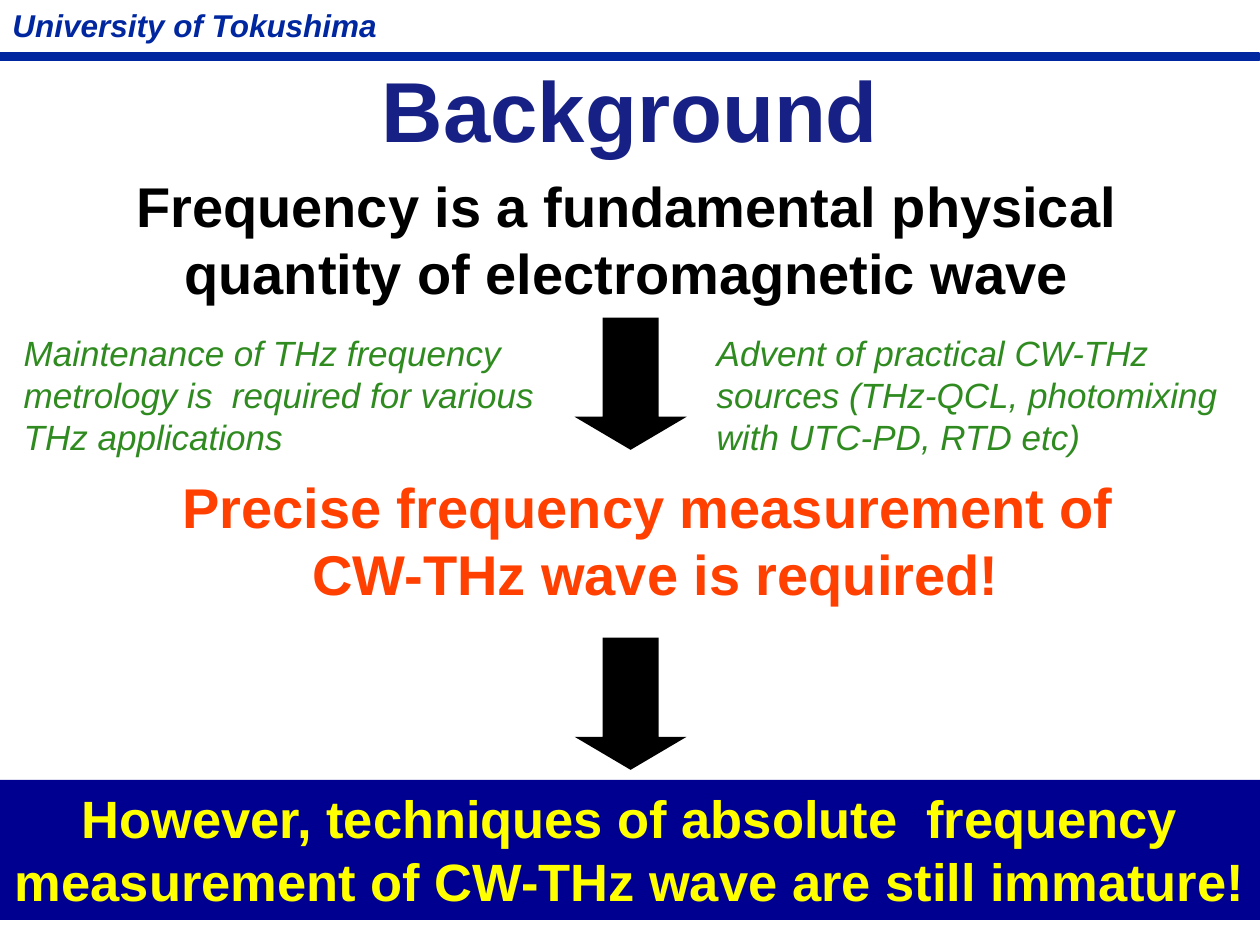
from pptx import Presentation
from pptx.dml.color import RGBColor
from pptx.enum.shapes import MSO_SHAPE as Shape
from pptx.enum.text import MSO_ANCHOR as Anchor, PP_ALIGN as Align
from pptx.util import Inches, Pt


def color(hex_code):
    return RGBColor.from_string(hex_code)


def write(frame, lines, size, hex_code, bold=False, italic=False, align=Align.CENTER):
    frame.word_wrap = True
    for i, line in enumerate(lines):
        paragraph = frame.add_paragraph() if i else frame.paragraphs[0]
        paragraph.alignment = align
        run = paragraph.add_run()
        run.text = line
        run.font.name = "Arial"
        run.font.size = Pt(size)
        run.font.bold = bold
        run.font.italic = italic
        run.font.color.rgb = color(hex_code)


prs = Presentation()
prs.slide_width, prs.slide_height = Inches(10), Inches(7.5)
slide = prs.slides.add_slide(prs.slide_layouts[5])
shapes = slide.shapes

# Header: rule and university name
rule = shapes.add_shape(Shape.RECTANGLE, Inches(0), Inches(0.42), Inches(9.99), Inches(0.06))
rule.shadow.inherit = False
rule.fill.solid()
rule.fill.fore_color.rgb = color("00279F")
rule.line.color.rgb = color("00279F")
rule.line.width = Pt(1)

university = shapes.add_textbox(Inches(0), Inches(0), Inches(3.12), Inches(0.4)).text_frame
write(university, ["University of Tokushima"], 18, "00279F", bold=True, italic=True, align=Align.LEFT)
university.word_wrap = False

# Title
title = shapes.title
title.left, title.top, title.width, title.height = Inches(0), Inches(0.64), Inches(10), Inches(0.44)
title.line.color.rgb = color("FFFFFF")
title.line.width = Pt(0.75)
title.text_frame.vertical_anchor = Anchor.MIDDLE
write(title.text_frame, ["Background"], 48.6, "172185", bold=True)

# Arrows between the three statements
for top in (2.52, 5.06):
    arrow = shapes.add_shape(Shape.DOWN_ARROW, Inches(4.56), Inches(top), Inches(0.89), Inches(1.05))
    arrow.shadow.inherit = False
    arrow.adjustments[0], arrow.adjustments[1] = 0.5, 0.295
    arrow.fill.solid()
    arrow.fill.fore_color.rgb = color("000000")
    arrow.line.fill.background()

# Premise and requirement
statements = [
    (0.5, 1.31, 8.95, "000000",
     ["Frequency is a fundamental physical quantity of electromagnetic wave"]),
    (0.46, 3.7, 9.49, "FF4000",
     ["Precise frequency measurement of ", "CW-THz wave is required!"]),
]
for left, top, width, hex_code, lines in statements:
    statement = shapes.add_textbox(Inches(left), Inches(top), Inches(width), Inches(1.18))
    write(statement.text_frame, lines, 32, hex_code, bold=True)

# Reasons on both sides of the first arrow
reasons = [
    (0.09, "Maintenance of THz frequency metrology is  required for various THz applications"),
    (5.59, "Advent of practical CW-THz sources (THz-QCL, photomixing with UTC-PD, RTD etc)"),
]
for left, text in reasons:
    reason = shapes.add_textbox(Inches(left), Inches(2.58), Inches(4.37), Inches(1.1))
    write(reason.text_frame, [text], 20, "2F8B20", italic=True, align=Align.LEFT)

# Conclusion band
conclusion = shapes.add_shape(Shape.RECTANGLE, Inches(0), Inches(6.19), Inches(10), Inches(1.11))
conclusion.shadow.inherit = False
conclusion.fill.solid()
conclusion.fill.fore_color.rgb = color("000090")
conclusion.line.fill.background()
conclusion.text_frame.vertical_anchor = Anchor.TOP
write(conclusion.text_frame,
      ["However, techniques of absolute  frequency measurement of CW-THz wave are still immature!"],
      30, "FFFF00", bold=True)

prs.save("out.pptx")
